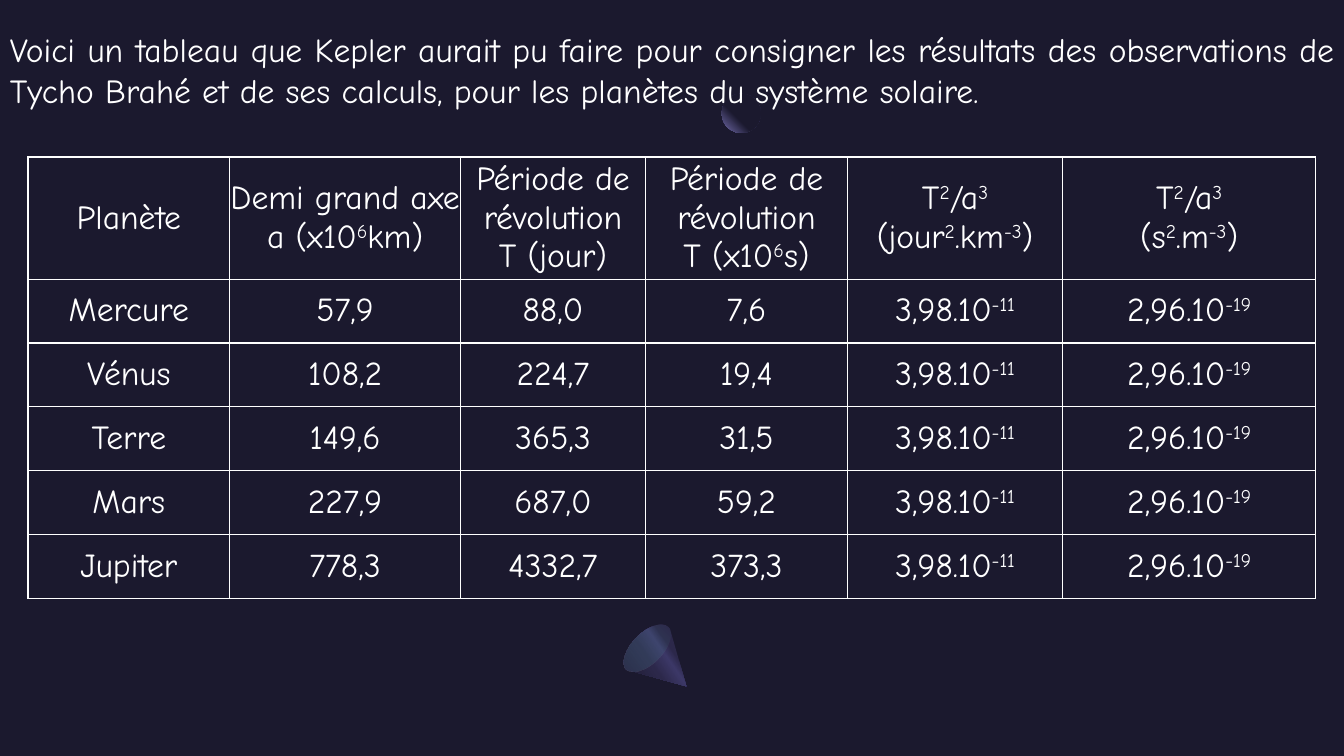
from lxml import etree
from pptx import Presentation
from pptx.dml.color import RGBColor
from pptx.enum.shapes import MSO_SHAPE
from pptx.enum.text import MSO_ANCHOR, MSO_AUTO_SIZE, PP_ALIGN
from pptx.oxml import parse_xml
from pptx.oxml.ns import nsdecls, qn
from pptx.util import Pt

CENTER, JUSTIFY = PP_ALIGN.CENTER, PP_ALIGN.JUSTIFY
MIDDLE = MSO_ANCHOR.MIDDLE
FIT_SHAPE = MSO_AUTO_SIZE.SHAPE_TO_FIT_TEXT
OVAL = MSO_SHAPE.OVAL
NIGHT, WHITE = "1B192E", "FFFFFF"


def write_text(frame, text, align=CENTER, size=24, font="Comic Neue", color=WHITE):
    """Write one paragraph per line; parts between ^ marks are superscript."""
    for line_index, line in enumerate(text.split("\n")):
        paragraph = frame.add_paragraph() if line_index else frame.paragraphs[0]
        paragraph.alignment = align
        for part_index, part in enumerate(line.split("^")):
            if not part:
                continue
            run = paragraph.add_run()
            run.text = part
            run.font.size = Pt(size)
            run.font.name = font
            run.font.color.rgb = RGBColor.from_string(color)
            if part_index % 2:
                run.font._element.set("baseline", "30000")


def fill_gradient(shape, stops, direction):
    """Fill with (percent, colour, opacity) stops, without line or shadow."""
    stop_xml = "".join(
        f'<a:gs pos="{percent * 1000}"><a:srgbClr val="{color}">'
        f'<a:alpha val="{opacity * 1000}"/></a:srgbClr></a:gs>'
        for percent, color, opacity in stops)
    shape.shadow.inherit = False
    shape.line.fill.background()
    shape.fill.background()
    properties = shape._element.spPr
    properties.replace(properties.find(qn("a:noFill")), parse_xml(
        f'<a:gradFill {nsdecls("a")} rotWithShape="1">'
        f'<a:gsLst>{stop_xml}</a:gsLst>{direction}</a:gradFill>'))


presentation = Presentation()
presentation.slide_width, presentation.slide_height = Pt(960), Pt(540)
slide = presentation.slides.add_slide(presentation.slide_layouts[6])
slide.background.fill.solid()
slide.background.fill.fore_color.rgb = RGBColor.from_string(NIGHT)

# Moon
moon = slide.shapes.add_shape(OVAL, Pt(515.5), Pt(67), Pt(28), Pt(28))
fill_gradient(moon, [(60, NIGHT, 100), (100, "7771B2", 100)],
              '<a:path path="circle"><a:fillToRect l="100000" b="100000"/></a:path>')

# Cone: straight sides and a curved rim, in points
cone = slide.shapes.add_group_shape()
rim_start = (449.3, 478.8)
rim_curves = [
    [(448.6, 478.8), (447.8, 478.8), (447.1, 478.1)],
    [(443.5, 473.8), (446.4, 463.7), (455, 455)],
    [(463, 447.1), (473, 443.5), (477.4, 447.8)],
    [(478.1, 448.6), (478.8, 449.3), (478.8, 450)],
]
outline = [rim_start]
for control_1, control_2, end in rim_curves:
    start = outline[-1]
    for step in range(1, 9):
        t = step / 8
        outline.append(tuple(
            (1 - t) ** 3 * p0 + 3 * (1 - t) ** 2 * t * p1 + 3 * (1 - t) * t ** 2 * p2 + t ** 3 * p3
            for p0, p1, p2, p3 in zip(start, control_1, control_2, end)))
builder = cone.shapes.build_freeform(Pt(490.3), Pt(490.3))
builder.add_line_segments([(Pt(x), Pt(y)) for x, y in outline], close=True)
cone_side = builder.convert_to_shape()
fill_gradient(cone_side,
              [(30, "2C284A", 100), (40, "3C3867", 100), (60, "2C284A", 100), (100, NIGHT, 100)],
              '<a:lin ang="8700000" scaled="0"/>')
cone_base = cone.shapes.add_shape(OVAL, Pt(451.4), Pt(441.5), Pt(21.6), Pt(42.5))
cone_base.rotation = 225
fill_gradient(cone_base, [(0, "454075", 33), (100, "5BEFC1", 0)],
              '<a:lin ang="5400000" scaled="0"/>')

# Introduction
introduction = slide.shapes.add_textbox(0, Pt(17.3), Pt(960), Pt(65.5))
introduction.text_frame.word_wrap = True
introduction.text_frame.auto_size = FIT_SHAPE
write_text(introduction.text_frame,
           "Voici un tableau que Kepler aurait pu faire pour consigner les résultats des "
           "observations de Tycho Brahé et de ses calculs, pour les planètes du système solaire.",
           align=JUSTIFY)

# Table of planets
headers = ["Planète", "Demi grand axe\na (x10^6^km)", "Période de révolution\nT (jour)",
           "Période de révolution\nT (x10^6^s)", "T^2^/a^3^\n(jour^2^.km^-3^)",
           "T^2^/a^3^\n(s^2^.m^-3^)"]
planets = [
    ["Mercure", "57,9", "88,0", "7,6"],
    ["Vénus", "108,2", "224,7", "19,4"],
    ["Terre", "149,6", "365,3", "31,5"],
    ["Mars", "227,9", "687,0", "59,2"],
    ["Jupiter", "778,3", "4332,7", "373,3"],
]
ratios = ["3,98.10^-11^", "2,96.10^-19^"]
rows = [headers] + [planet + ratios for planet in planets]
column_widths = [144, 165, 132, 144.5, 153.5, 181]
row_heights = [87.2] + [45.6] * len(planets)

table = slide.shapes.add_table(len(rows), len(headers), Pt(20), Pt(112.2),
                               Pt(sum(column_widths)), Pt(sum(row_heights))).table
table.first_row = table.horz_banding = False
for column, width in zip(table.columns, column_widths):
    column.width = Pt(width)
for row, height, texts in zip(table.rows, row_heights, rows):
    row.height = Pt(height)
    for cell, text in zip(row.cells, texts):
        cell.margin_left = cell.margin_right = cell.margin_top = cell.margin_bottom = 0
        cell.vertical_anchor = MIDDLE
        write_text(cell.text_frame, text)
        cell_properties = cell._tc.get_or_add_tcPr()
        for side in ("a:lnL", "a:lnR", "a:lnT", "a:lnB"):
            border = etree.SubElement(cell_properties, qn(side), w=str(Pt(1)))
            border_fill = etree.SubElement(border, qn("a:solidFill"))
            etree.SubElement(border_fill, qn("a:srgbClr"), val=WHITE)
        cell.fill.background()

presentation.save("out.pptx")
